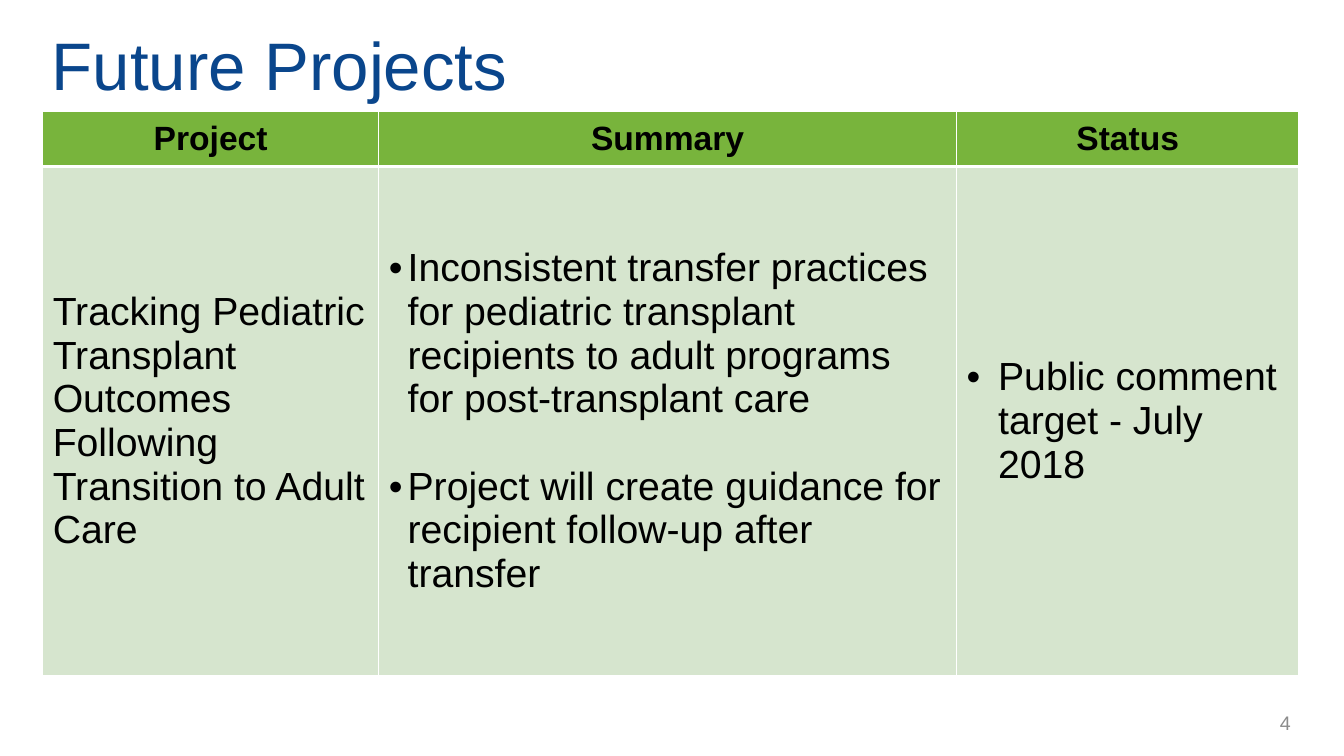
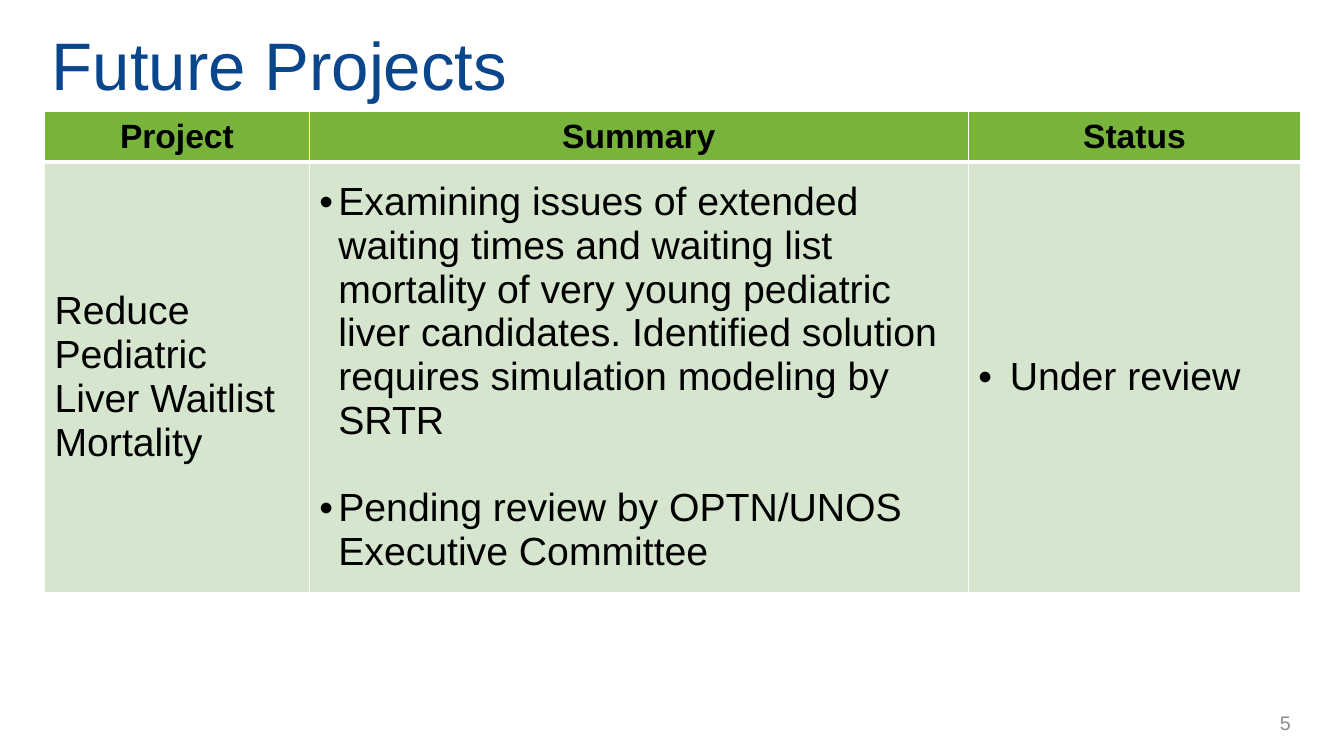
from lxml.etree import SubElement
from pptx import Presentation
from pptx.dml.color import RGBColor
from pptx.enum.text import MSO_VERTICAL_ANCHOR as Anchor, PP_PARAGRAPH_ALIGNMENT as Align
from pptx.oxml.ns import qn
from pptx.util import Pt

COLORS = {
    "title": "0A468C",
    "header": "78B43C",
    "body": "D6E5CE",
    "text": "000000",
    "border": "FFFFFF",
    "number": "8C8C8C",
}
FONT = "Arial"
HEADINGS = ("Project", "Summary", "Status")
SUMMARY_INDENT = 13.5
STATUS_INDENT = 22.5


def color(name):
    return RGBColor.from_string(COLORS[name])


def write(frame, *texts, size=28, fill="text", bold=False, align=Align.LEFT, indent=0, gap=0):
    frame.word_wrap = True
    frame.vertical_anchor = Anchor.MIDDLE
    for position, text in enumerate(texts):
        paragraph = frame.add_paragraph() if position else frame.paragraphs[0]
        if position:
            paragraph.space_before = Pt(gap)
        if indent:
            properties = paragraph._p.get_or_add_pPr()
            properties.set("marL", str(Pt(indent)))
            properties.set("indent", str(-Pt(indent)))
            SubElement(properties, qn("a:buFont"), typeface=FONT)
            SubElement(properties, qn("a:buChar"), char="•")
        paragraph.alignment = align
        run = paragraph.add_run()
        run.text = text
        run.font.name = FONT
        run.font.size = Pt(size)
        run.font.bold = bold
        run.font.color.rgb = color(fill)


class Deck:
    def __init__(self):
        self.presentation = Presentation()
        self.presentation.slide_width = Pt(960)
        self.presentation.slide_height = Pt(540)
        self.slide = None

    def new_slide(self, title, number):
        self.slide = self.presentation.slides.add_slide(self.presentation.slide_layouts[6])
        self.text(title, 30, 12, 918, 67, size=48, fill="title")
        self.text(str(number), 766, 502, 163, 29, size=14, fill="number", align=Align.RIGHT)

    def text(self, text, left, top, width, height, **style):
        box = self.slide.shapes.add_textbox(Pt(left), Pt(top), Pt(width), Pt(height))
        write(box.text_frame, text, **style)

    def cell(self, cell, *texts, fill, top, bottom, **style):
        properties = cell._tc.get_or_add_tcPr()
        for side, width in {"L": 1, "R": 1, "T": top, "B": bottom}.items():
            line = SubElement(properties, qn(f"a:ln{side}"), w=str(Pt(width)))
            solid = SubElement(line, qn("a:solidFill"))
            SubElement(solid, qn("a:srgbClr"), val=COLORS["border"])
        cell.fill.solid()
        cell.fill.fore_color.rgb = color(fill)
        write(cell.text_frame, *texts, **style)
        cell.vertical_anchor = Anchor.MIDDLE

    def projects(self, left, widths, heights, project, summary, status):
        table = self.slide.shapes.add_table(
            2, len(widths), Pt(left), Pt(79.5), Pt(sum(widths)), Pt(sum(heights))
        ).table
        for column, width in zip(table.columns, widths):
            column.width = Pt(width)
        for row, height in zip(table.rows, heights):
            row.height = Pt(height)
        for column, heading in enumerate(HEADINGS):
            self.cell(table.cell(0, column), heading, fill="header", top=1, bottom=3,
                      size=24, bold=True, align=Align.CENTER)
        contents = (([project], 0), (summary, SUMMARY_INDENT), ([status], STATUS_INDENT))
        for column, (texts, indent) in enumerate(contents):
            self.cell(table.cell(1, column), *texts, fill="body", top=3, bottom=1,
                      indent=indent, gap=31.2)


def main():
    deck = Deck()
    deck.new_slide("Future Projects", 4)
    deck.projects(
        30.5, (240, 412.8, 244.5), (39.5, 363.5),
        "Tracking Pediatric Transplant Outcomes Following Transition to Adult Care",
        [
            "Inconsistent transfer practices for pediatric transplant recipients "
            "to adult programs for post-transplant care",
            "Project will create guidance for recipient follow-up after transfer",
        ],
        "Public comment target - July 2018",
    )
    deck.new_slide("Future Projects", 5)
    deck.projects(
        31.8, (189.2, 470.6, 237.6), (34, 288),
        "Reduce Pediatric Liver Waitlist Mortality",
        [
            "Examining issues of extended waiting times and waiting list mortality of very "
            "young pediatric liver candidates. Identified solution requires simulation "
            "modeling by SRTR",
            "Pending review by OPTN/UNOS Executive Committee",
        ],
        "Under review",
    )
    deck.presentation.save("out.pptx")


if __name__ == "__main__":
    main()
